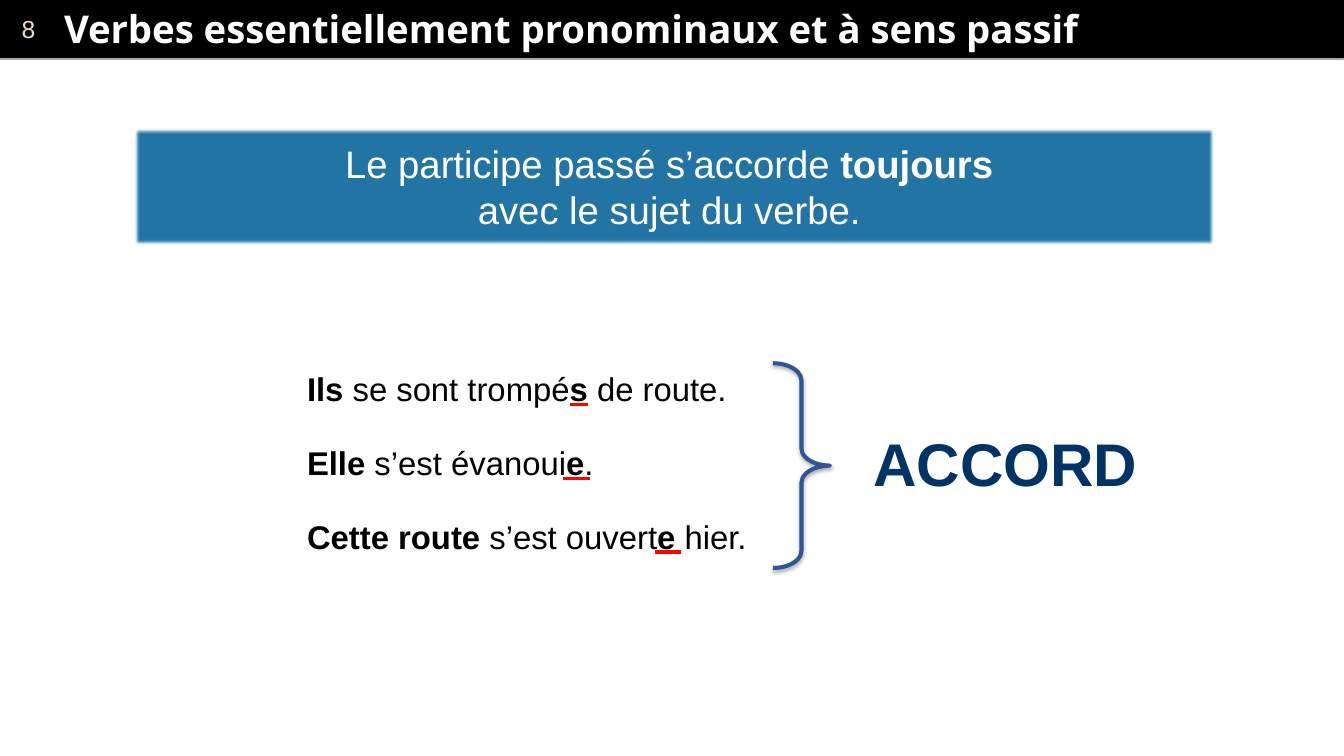
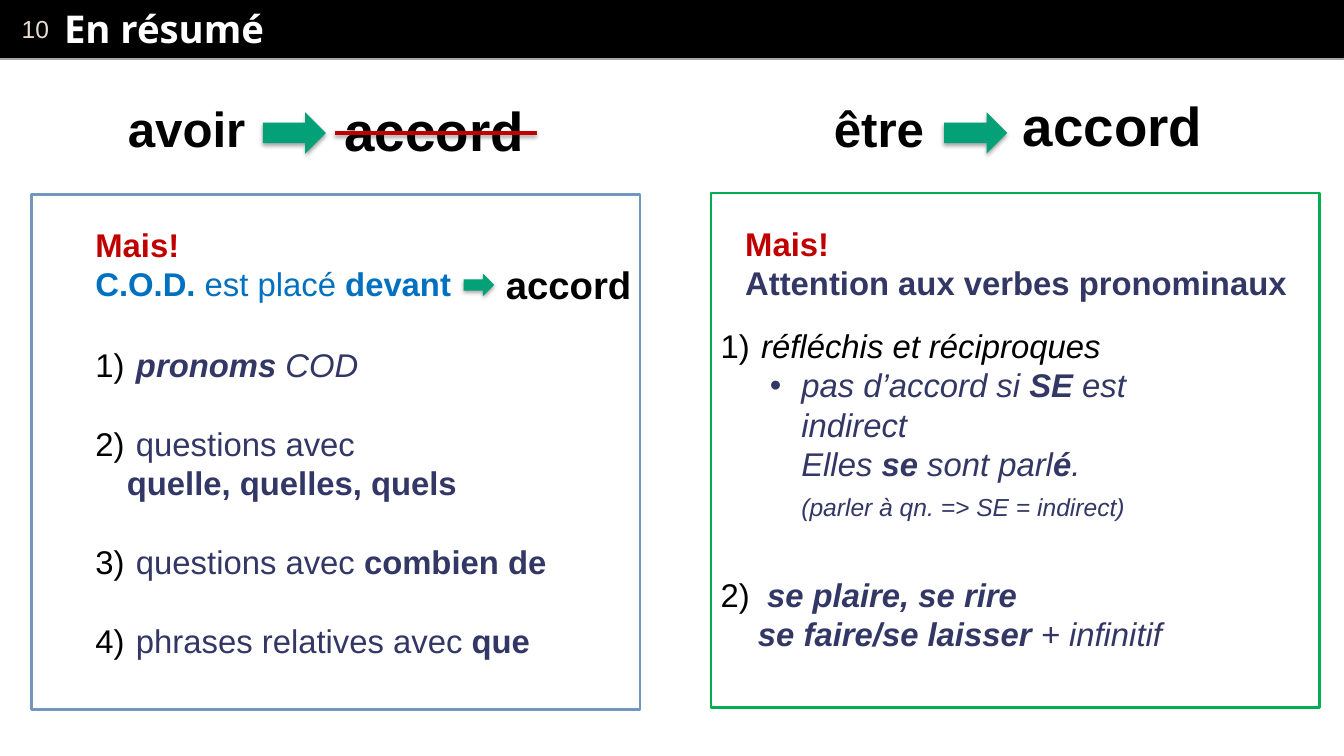
from lxml import etree
from pptx import Presentation
from pptx import util as u
from pptx.dml.color import RGBColor
from pptx.enum import shapes, text
from pptx.oxml import ns

COLORS = {
    "black": "000000", "white": "FFFFFF", "number": "E7DED1", "rule": "A6A6A6",
    "banner": "2274A5", "red": "FF0000", "dark_red": "C00000", "brace": "2F5597",
    "navy": "003366", "indigo": "333766", "sky": "0070C0", "arrow": "04A078",
    "steel": "7197BD", "green": "00B050",
}
BOLD = {"bold": True}
ITALIC = {"italic": True}
BOLD_ITALIC = {"bold": True, "italic": True}
BLACK = {"color": "black"}
PLAIN_SPACE = (" ", {"color": "black", "bold": False, "italic": False})
SINGLE_BREAK = u.Pt(29)


def rgb(name):
    return RGBColor.from_string(COLORS[name])


def child(parent, tag, **attrs):
    return etree.SubElement(parent, ns.qn("a:" + tag), attrs)


def add_shadow(effects):
    """Put a soft black shadow below the element that owns the effect list."""
    shadow = child(effects, "outerShdw", blurRad=str(u.Pt(3.1)), dist=str(u.Pt(1.8)),
                   dir="5400000", rotWithShape="0")
    black = child(shadow, "srgbClr", val=COLORS["black"])
    child(black, "alpha", val="35000")


def para(*runs, indent=None, number=None, bullet=None, **layout):
    """Describe a paragraph: runs are strings or (text, format) pairs."""
    return {"runs": runs, "indent": indent, "number": number,
            "bullet": bullet, "layout": layout}


class Deck:
    """Holds the shared style and the current slide."""

    font = "Arial"
    title_font = "Open Sans"
    width = 13.65

    def __init__(self):
        self.prs = Presentation()
        self.prs.slide_width = u.Inches(self.width)
        self.prs.slide_height = u.Inches(7.68)
        self.s = None

    def new_slide(self, number, title):
        self.s = self.prs.slides.add_slide(self.prs.slide_layouts[6])
        band = self.shape("RECTANGLE", 0, 0, self.width, 0.58,
                          fill="black", line="black", weight=0.75)
        self.set_text(band, [para(number)], margins=(0.22, 0.05),
                      anchor="MIDDLE", size=18, color="number")
        self.line(0, 0.6, self.width, "rule", 2)
        self.text(0.61, 0.01, 12.85, 0.56, [para(title)], margins=(0.04, 0.04),
                  anchor="MIDDLE", size=28, color="white", bold=True,
                  name=self.title_font)

    def shape(self, kind, x, y, w, h, fill=None, line=None, weight=2, shadow=False):
        sp = self.s.shapes.add_shape(getattr(shapes.MSO_SHAPE, kind),
                                     *map(u.Inches, (x, y, w, h)))
        sp.shadow.inherit = False
        if fill:
            sp.fill.solid()
            sp.fill.fore_color.rgb = rgb(fill)
        else:
            sp.fill.background()
        if line:
            sp.line.color.rgb = rgb(line)
            sp.line.width = u.Pt(weight)
        else:
            sp.line.fill.background()
        if shadow:
            add_shadow(sp._element.spPr.find(ns.qn("a:effectLst")))
        return sp

    def arrow(self, x, y, w, h):
        return self.shape("RIGHT_ARROW", x, y, w, h, fill="arrow", shadow=True)

    def line(self, x, y, length, color, weight, shadow=False):
        """Draw a horizontal line."""
        c = self.s.shapes.add_connector(shapes.MSO_CONNECTOR.STRAIGHT,
                                        *map(u.Inches, (x, y, x + length, y)))
        c.line.color.rgb = rgb(color)
        c.line.width = u.Pt(weight)
        effects = child(c._element.spPr, "effectLst")
        if shadow:
            add_shadow(effects)

    def text(self, x, y, w, h, paragraphs, **style):
        box = self.s.shapes.add_textbox(*map(u.Inches, (x, y, w, h)))
        self.set_text(box, paragraphs, **style)

    def set_text(self, sp, paragraphs, margins=(0.1, 0.05), anchor="TOP",
                 align="LEFT", **base):
        tf = sp.text_frame
        across, down = map(u.Inches, margins)
        frame = {"word_wrap": True, "margin_left": across, "margin_right": across,
                 "margin_top": down, "margin_bottom": down,
                 "vertical_anchor": getattr(text.MSO_ANCHOR, anchor)}
        for key, value in frame.items():
            setattr(tf, key, value)
        for i, item in enumerate(paragraphs):
            p = tf.add_paragraph() if i else tf.paragraphs[0]
            p.alignment = getattr(text.PP_ALIGN, align)
            for key, value in item["layout"].items():
                setattr(p, key, value)
            self.mark(p, item)
            for run in item["runs"]:
                words, extra = (run, {}) if isinstance(run, str) else run
                self.runs(p, words, {**base, **extra})

    def mark(self, p, item):
        """Set the indent and the number or bullet of a paragraph."""
        props = p._p.get_or_add_pPr()
        if item["indent"]:
            left, first = item["indent"]
            props.set("marL", str(u.Inches(left)))
            props.set("indent", str(u.Inches(first)))
        if item["number"] or item["bullet"]:
            child(props, "buFont", typeface=self.font)
        if item["number"]:
            child(props, "buAutoNum", type="arabicParenR", startAt=str(item["number"]))
        elif item["bullet"]:
            child(props, "buChar", char=item["bullet"])

    def runs(self, p, words, style):
        values = {"name": self.font, **style}
        color = rgb(values.pop("color", "black"))
        values["size"] = u.Pt(values["size"])
        for i, part in enumerate(words.split("\n")):
            if i:
                p.add_line_break()
            if part:
                r = p.add_run()
                r.text = part
                for key, value in values.items():
                    setattr(r.font, key, value)
                r.font.color.rgb = color


def agreement_slide(deck):
    deck.new_slide("8", "Verbes essentiellement pronominaux et à sens passif")
    banner = deck.shape("RECTANGLE", 1.37, 1.31, 10.96, 1.17, fill="banner")
    child(banner._element.spPr.find(ns.qn("a:effectLst")), "softEdge", rad=str(u.Pt(2)))
    deck.set_text(banner, [para("Le participe passé s’accorde ", ("toujours ", BOLD)),
                           para("avec le sujet du verbe. ")],
                  anchor="MIDDLE", align="CENTER", size=28, color="white")

    examples = [
        ("Ils", " se sont trompé", "s", " de route.", 5.79, 0.18),
        ("Elle", " s’est évanoui", "e", ".", 5.72, 0.27),
        ("Cette route", " s’est ouvert", "e ", "hier.", 6.65, 0.27),
    ]
    for i, (subject, verb, ending, rest, mark_x, mark_w) in enumerate(examples):
        y = 3.69 + 0.75 * i
        deck.text(3.02, y, 4.8, 0.51,
                  [para((subject, BOLD), verb, (ending, BOLD), rest)],
                  anchor="MIDDLE", size=24)
        deck.line(mark_x, y + 0.42, mark_w, "red", 2.75)

    brace = deck.shape("RIGHT_BRACE", 7.85, 3.69, 0.58, 2.08,
                       line="brace", weight=3, shadow=True)
    brace.adjustments[0] = 0.3
    deck.text(8.77, 4.36, 3, 0.67, [para("ACCORD")],
              anchor="MIDDLE", size=44, color="navy", bold=True)


def summary_slide(deck):
    deck.new_slide("10", "En résumé")
    headings = [
        ("avoir", 1.2, 2.67, 3.4, 0.93),
        ("être", 8.37, 9.59, 10.29, 0.88),
    ]
    for verb, verb_x, arrow_x, accord_x, accord_y in headings:
        deck.text(accord_x, accord_y, 2.2, 0.77, [para("accord")], size=40, bold=True)
        deck.text(verb_x, 0.95, 1.46, 0.71, [para(verb)], size=36, bold=True)
        deck.arrow(arrow_x, 1.14, 0.64, 0.42)
    deck.line(3.4, 1.35, 2.05, "dark_red", 3, shadow=True)

    warning = para(("Mais!", {"color": "dark_red", "bold": True}))
    deck.text(0.87, 2.23, 3.92, 0.91,
              [warning, para(("C.O.D.", BOLD), " est placé ", ("devant", BOLD))],
              size=24, color="sky")
    deck.arrow(4.71, 2.78, 0.31, 0.23)
    deck.text(5.04, 2.6, 1.6, 0.57, [para("accord")], size=28, bold=True)

    cases = [
        (("pronoms", BOLD_ITALIC), (" COD", ITALIC)),
        ("questions avec\n", ("quelle, quelles, quels", BOLD)),
        ("questions avec ", ("combien de", BOLD)),
        ("phrases relatives avec ", ("que", BOLD)),
    ]
    deck.text(0.87, 3.45, 5.25, 3.33,
              [para(PLAIN_SPACE, *runs, indent=(0.32, -0.32), number=1,
                    space_after=SINGLE_BREAK) for runs in cases],
              size=24, color="indigo")

    for x, y, color in ((0.32, 1.98, "steel"), (7.22, 1.96, "green")):
        deck.shape("RECTANGLE", x, y, 6.18, 5.23, line=color)

    deck.text(7.47, 2.22, 5.84, 0.91,
              [warning, para(("Attention aux verbes pronominaux", BOLD))],
              size=24, color="indigo")
    deck.text(7.22, 3.26, 4.75, 3.47, [
        para(PLAIN_SPACE, ("réfléchis et réciproques", BLACK),
             indent=(0.32, -0.32), number=1),
        para("pas d’accord si ", ("SE", BOLD), " est indirect",
             indent=(0.82, -0.32), bullet="•"),
        para("Elles ", ("se", BOLD), " sont parl", ("é", BOLD), ".", indent=(0.82, 0)),
        para(("(parler à qn. => SE = indirect)", {"size": 18}),
             indent=(0.82, 0), space_before=u.Pt(6)),
        para(PLAIN_SPACE, ("se plaire, se rire\nse faire/se laisser", BOLD),
             " + infinitif", indent=(0.38, -0.38), number=2, space_before=u.Pt(39)),
    ], size=24, color="indigo", italic=True)


def main():
    deck = Deck()
    agreement_slide(deck)
    summary_slide(deck)
    deck.prs.save("out.pptx")


if __name__ == "__main__":
    main()
